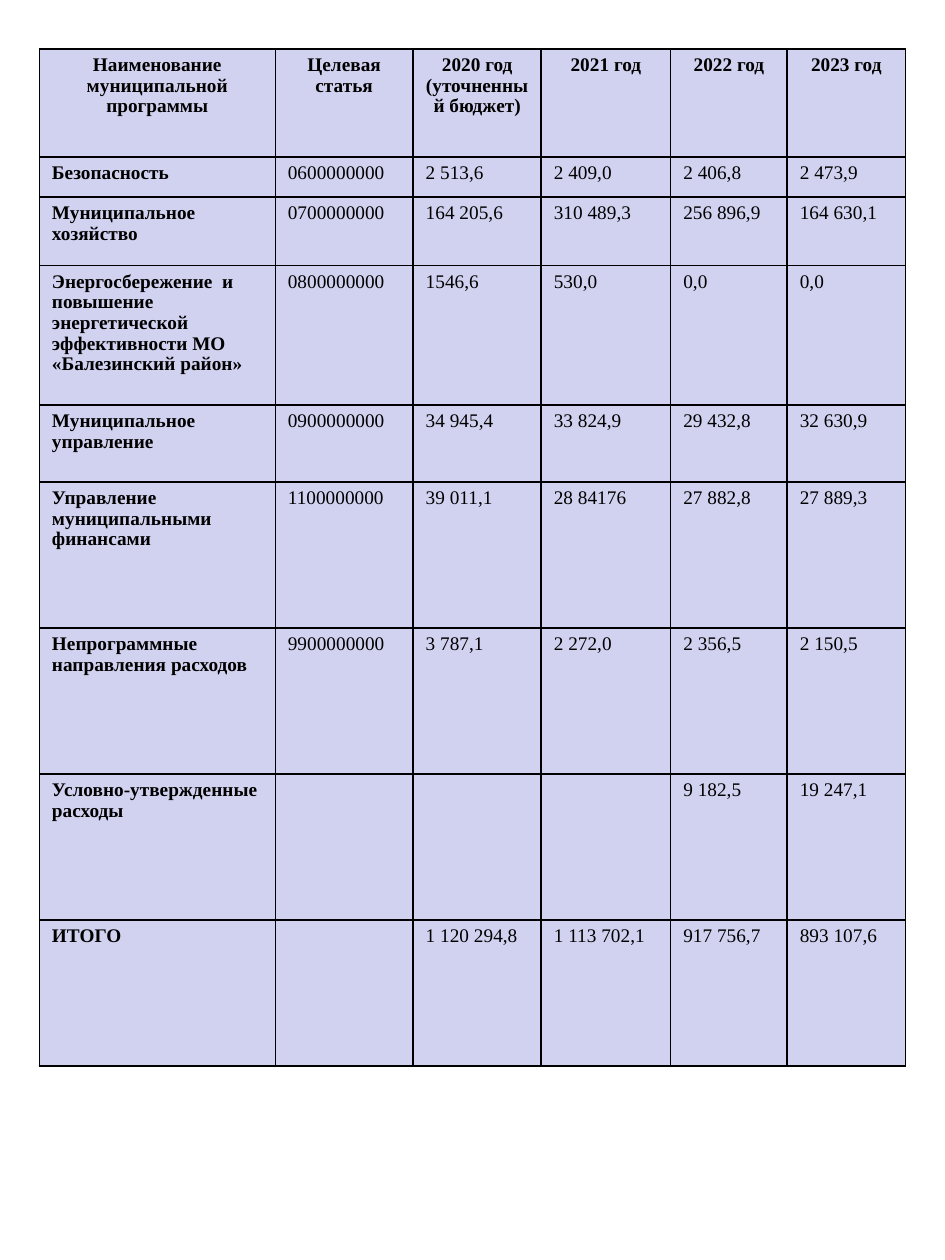
from lxml import etree
from pptx import Presentation
from pptx.dml.color import RGBColor
from pptx.enum.text import PP_ALIGN
from pptx.oxml.ns import qn
from pptx.util import Pt

CENTER, LEFT = PP_ALIGN.CENTER, PP_ALIGN.LEFT
COLORS = {"cell": "D1D1F0", "ink": "000000"}
FONT = "Times New Roman"

BUDGET = [
    ["Наименование муниципальной программы", "Целевая статья",
     "2020 год (уточненный бюджет)", "2021 год", "2022 год", "2023 год"],
    ["Безопасность", "0600000000", "2 513,6", "2 409,0", "2 406,8", "2 473,9"],
    ["Муниципальное хозяйство", "0700000000",
     "164 205,6", "310 489,3", "256 896,9", "164 630,1"],
    ["Энергосбережение  и повышение энергетической эффективности МО «Балезинский район»",
     "0800000000", "1546,6", "530,0", "0,0", "0,0"],
    ["Муниципальное управление", "0900000000",
     "34 945,4", "33 824,9", "29 432,8", "32 630,9"],
    ["Управление муниципальными финансами", "1100000000",
     "39 011,1", "28 84176", "27 882,8", "27 889,3"],
    ["Непрограммные направления расходов", "9900000000",
     "3 787,1", "2 272,0", "2 356,5", "2 150,5"],
    ["Условно-утвержденные расходы", "", "", "", "9 182,5", "19 247,1"],
    ["ИТОГО", "", "1 120 294,8", "1 113 702,1", "917 756,7", "893 107,6"],
]
COLUMN_WIDTHS = [134.8, 78.8, 73.2, 74, 66.6, 67.6]
ROW_HEIGHTS = [61.8, 22.8, 39.2, 79.7, 44] + [83.4] * 4


def add_borders(cell):
    properties = cell._tc.get_or_add_tcPr()
    for side in ("lnL", "lnR", "lnT", "lnB"):
        line = etree.SubElement(properties, qn(f"a:{side}"), w=str(Pt(1)))
        fill = etree.SubElement(line, qn("a:solidFill"))
        etree.SubElement(fill, qn("a:srgbClr"), val=COLORS["ink"])


prs = Presentation()
prs.slide_width, prs.slide_height = Pt(540), Pt(720)
slide = prs.slides.add_slide(prs.slide_layouts[6])

budget_table = slide.shapes.add_table(
    len(ROW_HEIGHTS), len(COLUMN_WIDTHS), Pt(22.5), Pt(28),
    Pt(sum(COLUMN_WIDTHS)), Pt(sum(ROW_HEIGHTS))).table
budget_table.first_row = False
budget_table.horz_banding = False
for column, width in zip(budget_table.columns, COLUMN_WIDTHS):
    column.width = Pt(width)
for row, height in zip(budget_table.rows, ROW_HEIGHTS):
    row.height = Pt(height)

for r, entries in enumerate(BUDGET):
    for c, entry in enumerate(entries):
        cell = budget_table.cell(r, c)
        add_borders(cell)
        cell.fill.solid()
        cell.fill.fore_color.rgb = RGBColor.from_string(COLORS["cell"])
        cell.text = entry
        paragraph = cell.text_frame.paragraphs[0]
        paragraph.alignment = CENTER if r == 0 else LEFT
        paragraph.line_spacing = 0.96
        paragraph.font.name = FONT
        paragraph.font.size = Pt(11)
        paragraph.font.bold = r == 0 or c == 0
        paragraph.font.color.rgb = RGBColor.from_string(COLORS["ink"])

prs.save("out.pptx")
